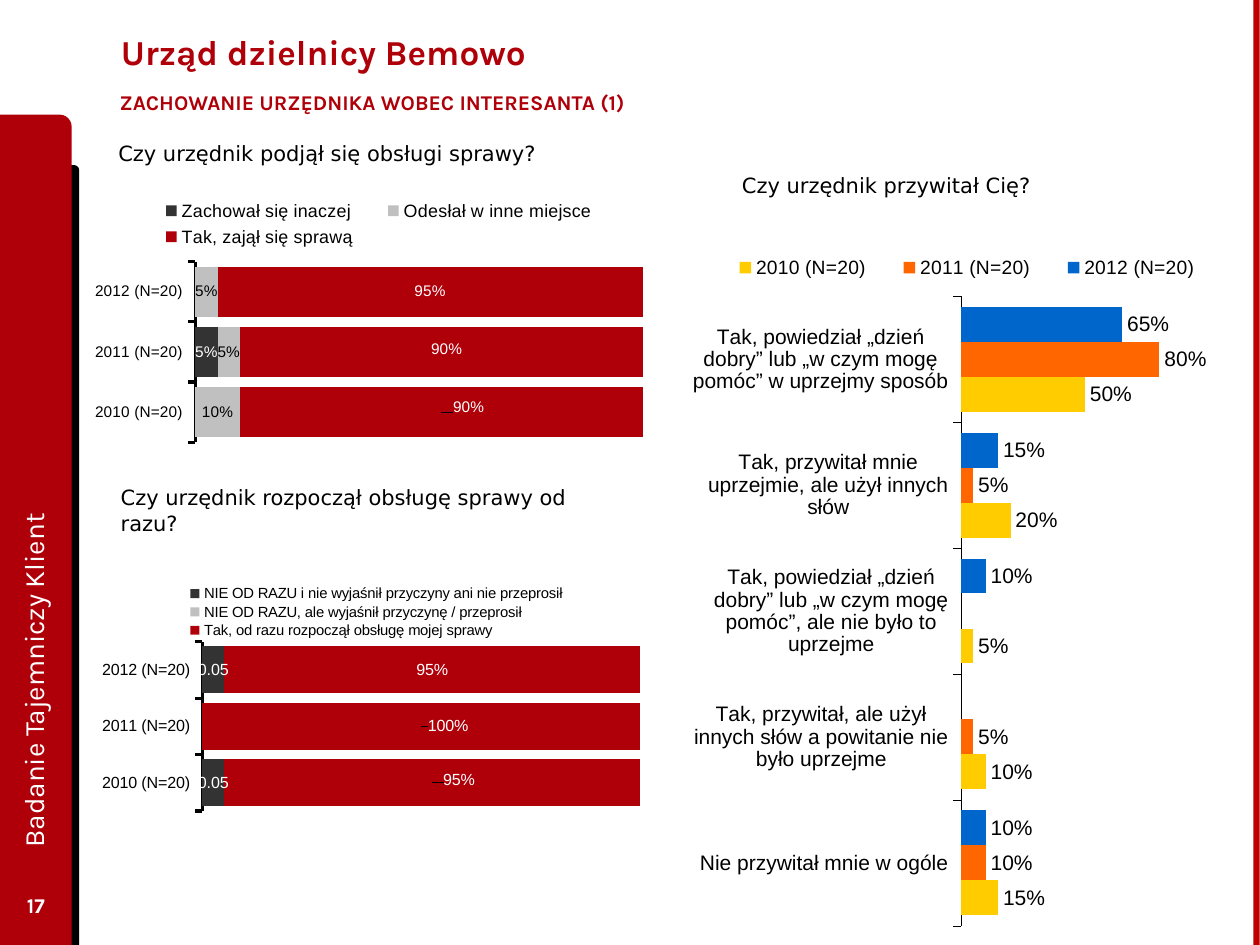
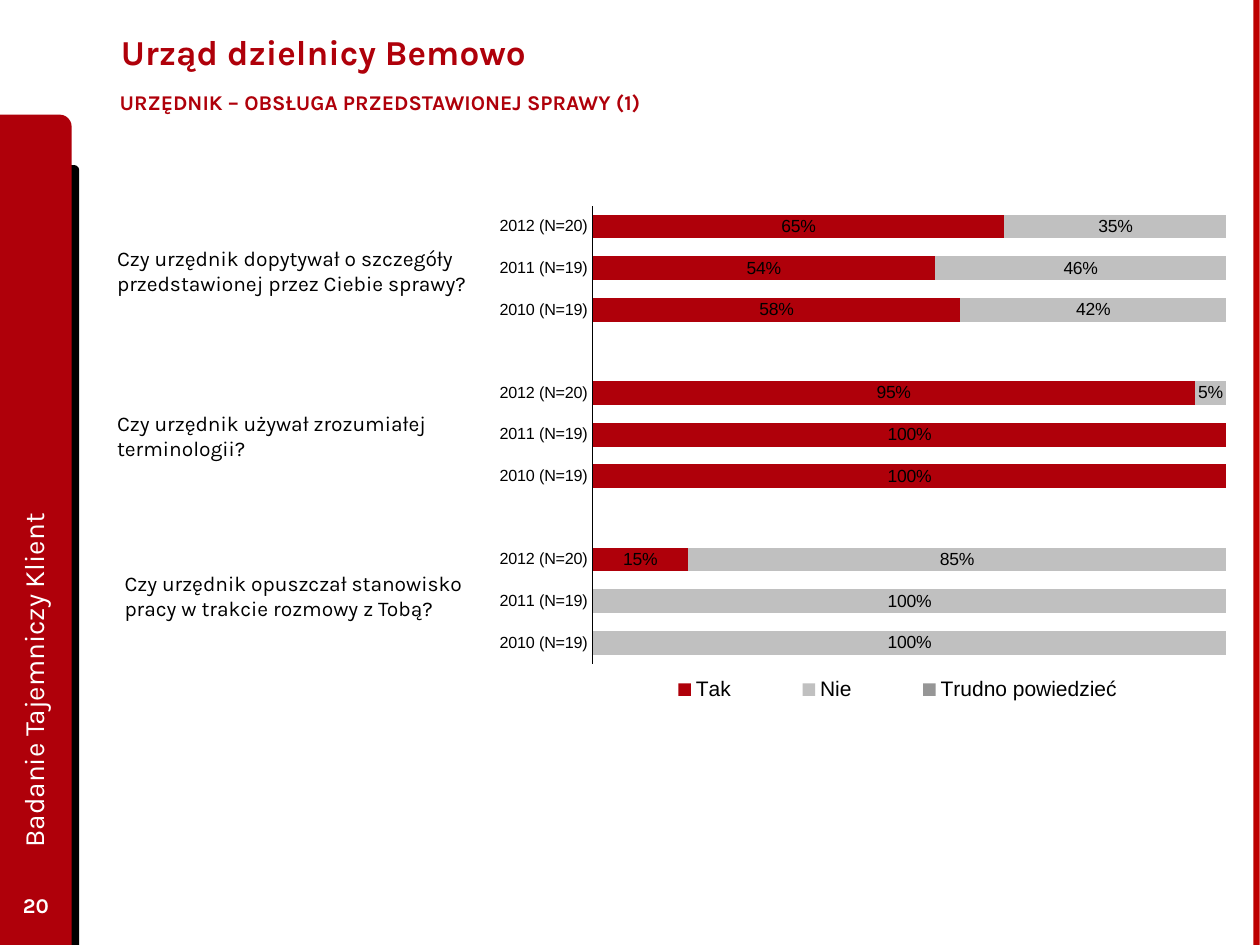
from collections import namedtuple
from copy import deepcopy

from pptx import Presentation
from pptx.chart.data import CategoryChartData
from pptx.dml.color import RGBColor
from pptx.enum.chart import XL_CHART_TYPE as ChartType
from pptx.enum.chart import XL_LEGEND_POSITION as LegendSide
from pptx.enum.chart import XL_TICK_MARK as Tick
from pptx.enum.shapes import MSO_SHAPE as Preset
from pptx.enum.text import MSO_ANCHOR as Anchor
from pptx.enum.text import PP_ALIGN as Align
from pptx.oxml import parse_xml
from pptx.oxml.ns import nsdecls, qn
from pptx.util import Pt

RED = RGBColor(0xAF, 0x00, 0x0A)
EDGE_RED = RGBColor(0xBD, 0x00, 0x00)
BLACK = RGBColor(0, 0, 0)
WHITE = RGBColor(0xFF, 0xFF, 0xFF)
CHARCOAL = RGBColor(0x33, 0x33, 0x33)
SILVER = RGBColor(0xC0, 0xC0, 0xC0)
GRAY = RGBColor(0x96, 0x96, 0x96)
BLUE = RGBColor(0x00, 0x66, 0xCC)
ORANGE = RGBColor(0xFF, 0x66, 0x00)
YELLOW = RGBColor(0xFF, 0xCC, 0x00)

BRAND_FONT = "Karla"
CHART_FONT = "Arial"
QUESTION_FONT = "DejaVu Sans"
PERCENT = "0%"

Box = namedtuple("Box", "left top width height")
Answer = namedtuple("Answer", "name color values label_color number_format shifts",
                    defaults=(BLACK, PERCENT, {}))
PAGE = Box(0, 0, 720, 540)


def in_points(box):
    return [Pt(length) for length in box]


def format_text(frame, text, size=12, font=BRAND_FONT, color=BLACK, bold=False,
                align=Align.LEFT, anchor=Anchor.TOP, side_inset=7.2):
    frame.text = text
    frame.word_wrap = True
    frame.vertical_anchor = anchor
    frame.margin_left = frame.margin_right = Pt(side_inset)
    paragraph = frame.paragraphs[0]
    paragraph.alignment = align
    paragraph.font.size = Pt(size)
    paragraph.font.name = font
    paragraph.font.bold = bold
    paragraph.font.color.rgb = color


def add_text(slide, box, text, rotation=0, **text_format):
    label = slide.shapes.add_textbox(*in_points(box))
    label.rotation = rotation
    format_text(label.text_frame, text, **text_format)


def add_band(slide, preset, box, color):
    band = slide.shapes.add_shape(preset, *in_points(box))
    band.shadow.inherit = False
    band.fill.solid()
    band.fill.fore_color.rgb = color
    band.line.fill.background()


def add_bands(slide, page, number):
    bottom = page.top + page.height
    for left, top, width, color in ((28, 94.3, 17.3, BLACK), (0, 65.5, 41, RED)):
        add_band(slide, Preset.ROUND_1_RECTANGLE,
                 Box(page.left + left, page.top + top, width, page.height - top), color)
    add_band(slide, Preset.RECTANGLE,
             Box(page.left + page.width - 3.8, page.top, 3.6, page.height), EDGE_RED)
    add_text(slide, Box(page.left, bottom - 37.4, 41, 28.8), number, color=WHITE,
             bold=True, align=Align.CENTER, anchor=Anchor.MIDDLE)
    add_text(slide, Box(page.left - 188.6, bottom - 274.3, 414.7, 36.7),
             "Badanie Tajemniczy Klient", rotation=270, size=16, color=WHITE,
             anchor=Anchor.MIDDLE)


def add_heading(slide, box, subtitle):
    title = slide.shapes.title
    title.left, title.top, title.width, title.height = in_points(
        Box(box.left + 7.9, box.top, box.width - 7.9, 51.8))
    format_text(title.text_frame, "Urząd dzielnicy Bemowo", size=20, color=RED,
                bold=True, anchor=Anchor.MIDDLE)
    add_text(slide, Box(box.left, box.top + 43.9, 340, 23.8), subtitle,
             color=RED, bold=True, side_inset=14.4)


def start_slide(deck, subtitle, number):
    slide = deck.slides.add_slide(deck.slide_layouts[5])
    add_bands(slide, PAGE, number)
    add_heading(slide, Box(54, 3.6, 567, 67.7), subtitle)
    return slide


def manual_layout(area, target=""):
    modes = "".join(f'<c:{name}Mode val="edge"/>' for name in ("x", "y")) if len(area) == 4 else ""
    places = "".join(f'<c:{name} val="{value}"/>' for name, value in zip("xywh", area))
    return parse_xml(f'<c:layout {nsdecls("c")}><c:manualLayout>{target}{modes}{places}'
                     "</c:manualLayout></c:layout>")


def set_layout(parent, index, area, target=""):
    for layout in parent.findall(qn("c:layout")):
        parent.remove(layout)
    parent.insert(index, manual_layout(area, target))


def shift_labels(labels, shifts):
    shared = [deepcopy(part) for part in labels]
    for point in sorted(shifts, reverse=True):
        label = parse_xml(f'<c:dLbl {nsdecls("c")}><c:idx val="{point}"/></c:dLbl>')
        label.append(manual_layout(shifts[point]))
        label.extend(deepcopy(part) for part in shared)
        labels.insert(0, label)


def set_font(font, size, color=BLACK):
    font.name = CHART_FONT
    font.size = Pt(size)
    font.color.rgb = color


def add_bars(slide, box, kind, categories, answers, plot_area, legend_area, legend_side,
             gap, axis_size, label_size, legend_size, axis_width, tick=Tick.OUTSIDE,
             top_down=False):
    data = CategoryChartData(number_format=PERCENT)
    data.categories = categories
    for answer in answers:
        data.add_series(answer.name, answer.values)
    chart = slide.shapes.add_chart(kind, *in_points(box), data).chart
    chart.has_title = False
    set_font(chart.font, axis_size)

    years = chart.category_axis
    years.major_tick_mark = tick
    years.minor_tick_mark = Tick.NONE
    years.reverse_order = top_down
    years.has_major_gridlines = False
    years.format.line.color.rgb = BLACK
    years.format.line.width = Pt(axis_width)
    set_font(years.tick_labels.font, axis_size)

    share = chart.value_axis
    share.has_major_gridlines = False
    share.minimum_scale, share.maximum_scale, share.major_unit = 0, 1, 0.2
    share.visible = False

    plot = chart.plots[0]
    plot.vary_by_categories = False
    plot.gap_width = gap
    plot.overlap = 0 if kind == ChartType.BAR_CLUSTERED else 100
    for answer, series in zip(answers, plot.series):
        series.invert_if_negative = False
        series.format.fill.solid()
        series.format.fill.fore_color.rgb = answer.color
        labels = series.data_labels
        labels.show_value = True
        labels.number_format = answer.number_format
        labels.number_format_is_linked = False
        set_font(labels.font, label_size, answer.label_color)
        shift_labels(labels._element, answer.shifts)

    chart.has_legend = True
    chart.legend.position = legend_side
    chart.legend.include_in_layout = False
    set_font(chart.legend.font, legend_size)
    set_layout(chart.legend._element, 1, legend_area)
    set_layout(chart._chartSpace.chart.plotArea, 0, plot_area,
               '<c:layoutTarget val="inner"/>')


def add_yearly_split(slide, box, answers, **chart_format):
    add_bars(slide, box, ChartType.BAR_STACKED_100,
             [f"{year} (N=20)" for year in (2010, 2011, 2012)], answers,
             legend_side=LegendSide.TOP, gap=20, axis_width=1.85, **chart_format)


def add_taking_case(slide, box):
    add_text(slide, Box(box.left + 7.2, box.top, 286.6, 21.6),
             "Czy urzędnik podjął się obsługi sprawy?", font=QUESTION_FONT)
    add_yearly_split(
        slide, Box(box.left, box.top + 33.1, box.width, box.height - 33.1),
        [Answer("Zachował się inaczej", CHARCOAL, (None, 0.05, None), WHITE),
         Answer("Odesłał w inne miejsce", SILVER, (0.1, 0.05, 0.05)),
         Answer("Tak, zajął się sprawą", RED, (0.9, 0.9, 0.95), WHITE,
                shifts={0: (0.05, -0.02), 1: (0.01, -0.01)})],
        plot_area=(0.186, 0.266, 0.814, 0.696), legend_area=(0.08, 0.01, 0.88, 0.22),
        axis_size=8.8, label_size=8.8, legend_size=10.2)


def add_prompt_start(slide, box):
    add_text(slide, Box(box.left + 3.6, box.top, 280, 36),
             "Czy urzędnik rozpoczął obsługę sprawy od razu?", font=QUESTION_FONT)
    add_yearly_split(
        slide, Box(box.left, box.top + 58.3, box.width, box.height - 58.3),
        [Answer("NIE OD RAZU i nie wyjaśnił przyczyny ani nie przeprosił", CHARCOAL,
                (0.05, None, 0.05), WHITE, "General"),
         Answer("NIE OD RAZU, ale wyjaśnił przyczynę / przeprosił", SILVER,
                (None, None, None), WHITE),
         Answer("Tak, od razu rozpoczął obsługę mojej sprawy", RED, (0.95, 1, 0.95), WHITE,
                shifts={0: (0.05, -0.01), 1: (0.05, 0)})],
        plot_area=(0.188, 0.269, 0.815, 0.736), legend_area=(0.15, 0.01, 0.72, 0.25),
        axis_size=9.2, label_size=9.2, legend_size=8.5)


def add_greeting(slide, box):
    add_text(slide, Box(box.left + 21.6, box.top, 205.9, 21.6),
             "Czy urzędnik przywitał Cię?", font=QUESTION_FONT)
    add_bars(
        slide, Box(box.left, box.top + 33.9, box.width, box.height - 33.9),
        ChartType.BAR_CLUSTERED,
        ["Tak, powiedział „dzień dobry” lub „w czym mogę pomóc” w uprzejmy sposób",
         "Tak, przywitał mnie uprzejmie, ale użył innych słów",
         "Tak, powiedział „dzień dobry” lub „w czym mogę pomóc”, ale nie było to uprzejme",
         "Tak, przywitał, ale użył innych słów a powitanie nie było uprzejme",
         "Nie przywitał mnie w ogóle"],
        [Answer("2012 (N=20)", BLUE, (0.65, 0.15, 0.1, None, 0.1)),
         Answer("2011 (N=20)", ORANGE, (0.8, 0.05, None, 0.05, 0.1)),
         Answer("2010 (N=20)", YELLOW, (0.5, 0.2, 0.05, 0.1, 0.15))],
        plot_area=(0.489, 0.103, 0.451, 0.899), legend_area=(0.03, 0.03, 0.94, 0.06),
        legend_side=LegendSide.RIGHT, gap=60, axis_size=12, label_size=12,
        legend_size=11, axis_width=0.25, top_down=True)


def add_case_handling(slide, box):
    questions = (
        (0, 25.2, 232.6, "Czy urzędnik dopytywał o szczegóły przedstawionej przez Ciebie sprawy?"),
        (0, 119.5, 232.6, "Czy urzędnik używał zrozumiałej terminologii?"),
        (4.3, 211, 211, "Czy urzędnik opuszczał stanowisko pracy w trakcie rozmowy z Tobą?"))
    for left, top, width, question in questions:
        add_text(slide, Box(box.left + left, box.top + top, width, 36), question)
    years = ["2012 (N=20)", "2011 (N=19)", "2010 (N=19)"]
    add_bars(
        slide, Box(box.left + 217.4, box.top, box.width - 217.4, box.height),
        ChartType.BAR_STACKED, [*years, "", *years, "", *years],
        [Answer("Tak", RED, (0.65, 0.54, 0.58, None, 0.95, 1, 1, None, 0.15, None, None)),
         Answer("Nie", SILVER,
                (0.35, 0.46, 0.42, None, 0.05, None, None, None, 0.85, 1, 1)),
         Answer("Trudno powiedzieć", GRAY, (None,) * 11)],
        plot_area=(0.142, 0.02, 0.837, 0.88), legend_area=(0.17, 0.91, 0.75, 0.08),
        legend_side=LegendSide.BOTTOM, gap=75, axis_size=9.2, label_size=10,
        legend_size=12, axis_width=0.25, tick=Tick.NONE, top_down=True)


def main():
    deck = Presentation()
    deck.slide_width, deck.slide_height = Pt(PAGE.width), Pt(PAGE.height)

    behaviour = start_slide(deck, "ZACHOWANIE URZĘDNIKA WOBEC INTERESANTA (1)", "17")
    add_taking_case(behaviour, Box(53.3, 77, 313.9, 181.4))
    add_prompt_start(behaviour, Box(58.3, 273.6, 307.4, 190.8))
    add_greeting(behaviour, Box(395.3, 95, 314.6, 434.2))

    handling = start_slide(deck, "URZĘDNIK – OBSŁUGA PRZEDSTAWIONEJ SPRAWY (1)", "20")
    add_case_handling(handling, Box(59.8, 111.6, 650.1, 297.4))

    deck.save("out.pptx")


if __name__ == "__main__":
    main()
